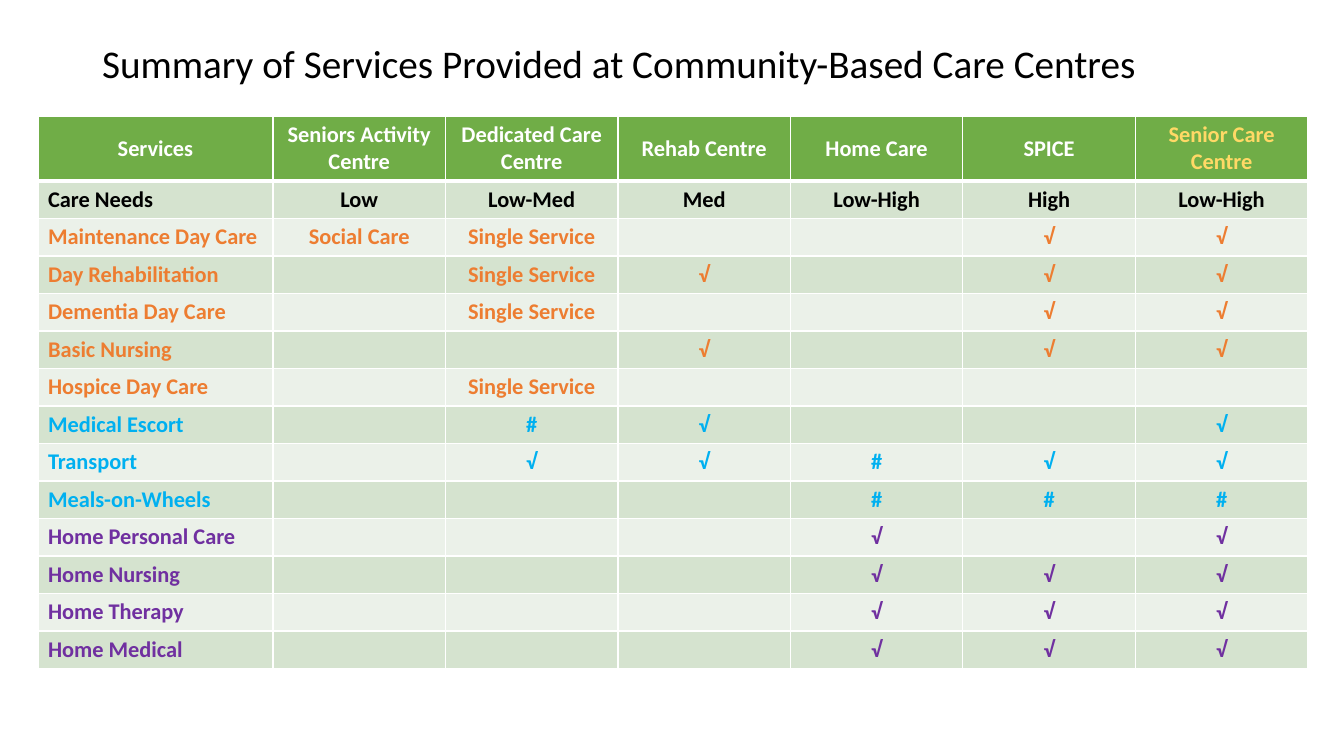
from dataclasses import dataclass

from lxml.etree import SubElement
from pptx import Presentation
from pptx.dml.color import RGBColor
from pptx.enum.text import MSO_ANCHOR, MSO_AUTO_SIZE, PP_ALIGN
from pptx.oxml.ns import qn
from pptx.slide import Slide
from pptx.table import _Cell
from pptx.text.text import Font
from pptx.util import Emu, Pt

PX = 914400 / 100.8
FONT = "Calibri"

WHITE = RGBColor(0xFF, 0xFF, 0xFF)
BLACK = RGBColor(0x00, 0x00, 0x00)
GREEN = RGBColor(0x70, 0xAD, 0x47)
BAND_DARK = RGBColor(0xD5, 0xE3, 0xCF)
BAND_LIGHT = RGBColor(0xEB, 0xF1, 0xE9)
YELLOW = RGBColor(0xFF, 0xD9, 0x66)
ORANGE = RGBColor(0xED, 0x7D, 0x31)
BLUE = RGBColor(0x00, 0xB0, 0xF0)
PURPLE = RGBColor(0x70, 0x30, 0xA0)

TITLE = "Summary of Services Provided at Community-Based Care Centres"
TITLE_BOX = {"left": 92, "top": 40, "width": 1159, "height": 146}
TABLE_LEFT, TABLE_TOP, TABLE_WIDTH = 38, 116, 1270
SERVICE_WIDTH, HEADER_HEIGHT, ROW_HEIGHT = 235, 65, 37
TEXT_SIZE = 16
THIN, THICK = 1, 3

HEADERS = ("Services", "Seniors Activity Centre", "Dedicated Care Centre",
           "Rehab Centre", "Home Care", "SPICE", "Senior Care Centre")


@dataclass(frozen=True)
class Service:
    name: str
    color: RGBColor
    centres: tuple[str, ...]


SINGLE = "Single Service"
SERVICES = (
    Service("Care Needs", BLACK, ("Low", "Low-Med", "Med", "Low-High", "High", "Low-High")),
    Service("Maintenance Day Care", ORANGE, ("Social Care", SINGLE, "", "", "√", "√")),
    Service("Day Rehabilitation", ORANGE, ("", SINGLE, "√", "", "√", "√")),
    Service("Dementia Day Care", ORANGE, ("", SINGLE, "", "", "√", "√")),
    Service("Basic Nursing", ORANGE, ("", "", "√", "", "√", "√")),
    Service("Hospice Day Care", ORANGE, ("", SINGLE, "", "", "", "")),
    Service("Medical Escort", BLUE, ("", "#", "√", "", "", "√")),
    Service("Transport", BLUE, ("", "√", "√", "#", "√", "√")),
    Service("Meals-on-Wheels", BLUE, ("", "", "", "#", "#", "#")),
    Service("Home Personal Care", PURPLE, ("", "", "", "√", "", "√")),
    Service("Home Nursing", PURPLE, ("", "", "", "√", "√", "√")),
    Service("Home Therapy", PURPLE, ("", "", "", "√", "√", "√")),
    Service("Home Medical", PURPLE, ("", "", "", "√", "√", "√")),
)


def px(length: float) -> Emu:
    return Emu(round(length * PX))


def format_font(font: Font, size: int, color: RGBColor, bold: bool) -> None:
    for name, value in {"name": FONT, "size": Pt(size), "bold": bold}.items():
        setattr(font, name, value)
    font.color.rgb = color


def add_borders(cell: _Cell, top: int, bottom: int) -> None:
    """Draw white cell borders; call before the fill, which must follow them."""
    properties = cell._tc.get_or_add_tcPr()
    for tag, width in {"lnL": THIN, "lnR": THIN, "lnT": top, "lnB": bottom}.items():
        line = SubElement(properties, qn(f"a:{tag}"), w=str(Pt(width)))
        fill = SubElement(line, qn("a:solidFill"))
        SubElement(fill, qn("a:srgbClr"), val=str(WHITE))


def fill_cell(cell: _Cell, text: str, color: RGBColor, fill: RGBColor,
              alignment: PP_ALIGN) -> None:
    cell.fill.solid()
    cell.fill.fore_color.rgb = fill
    cell.vertical_anchor = MSO_ANCHOR.MIDDLE
    paragraph = cell.text_frame.paragraphs[0]
    paragraph.alignment = alignment
    if text:
        run = paragraph.add_run()
        run.text = text
        format_font(run.font, TEXT_SIZE, color, True)
    else:
        # An empty cell needs the text size too, or its row grows taller.
        SubElement(paragraph._p, qn("a:endParaRPr"), sz=str(TEXT_SIZE * 100))


def add_title(slide: Slide) -> None:
    title = slide.shapes.title
    for name, length in TITLE_BOX.items():
        setattr(title, name, px(length))
    frame = title.text_frame
    frame.text = TITLE
    for name, value in {"word_wrap": True, "auto_size": MSO_AUTO_SIZE.NONE,
                        "vertical_anchor": MSO_ANCHOR.TOP}.items():
        setattr(frame, name, value)
    paragraph = frame.paragraphs[0]
    paragraph.alignment = PP_ALIGN.LEFT
    paragraph.line_spacing = 0.9
    format_font(paragraph.runs[0].font, 28, BLACK, False)


def add_services_table(slide: Slide) -> None:
    height = HEADER_HEIGHT + ROW_HEIGHT * len(SERVICES)
    table = slide.shapes.add_table(
        len(SERVICES) + 1, len(HEADERS),
        px(TABLE_LEFT), px(TABLE_TOP), px(TABLE_WIDTH), px(height)).table
    centre_width = (TABLE_WIDTH - SERVICE_WIDTH) / (len(HEADERS) - 1)
    for index, column in enumerate(table.columns):
        column.width = px(centre_width if index else SERVICE_WIDTH)
    for index, row in enumerate(table.rows):
        row.height = px(ROW_HEIGHT if index else HEADER_HEIGHT)

    for column, header in enumerate(HEADERS):
        cell = table.cell(0, column)
        add_borders(cell, THIN, THICK)
        color = YELLOW if header == HEADERS[-1] else WHITE
        fill_cell(cell, header, color, GREEN, PP_ALIGN.CENTER)

    for row, service in enumerate(SERVICES, start=1):
        band = BAND_DARK if row % 2 else BAND_LIGHT
        for column, text in enumerate((service.name, *service.centres)):
            cell = table.cell(row, column)
            add_borders(cell, THICK if row == 1 else THIN, THIN)
            alignment = PP_ALIGN.CENTER if column else PP_ALIGN.LEFT
            fill_cell(cell, text, service.color, band, alignment)


def main() -> None:
    presentation = Presentation()
    presentation.slide_width = px(1344)
    presentation.slide_height = px(756)
    slide = presentation.slides.add_slide(presentation.slide_layouts.get_by_name("Title Only"))
    add_title(slide)
    add_services_table(slide)
    presentation.save("out.pptx")


if __name__ == "__main__":
    main()
